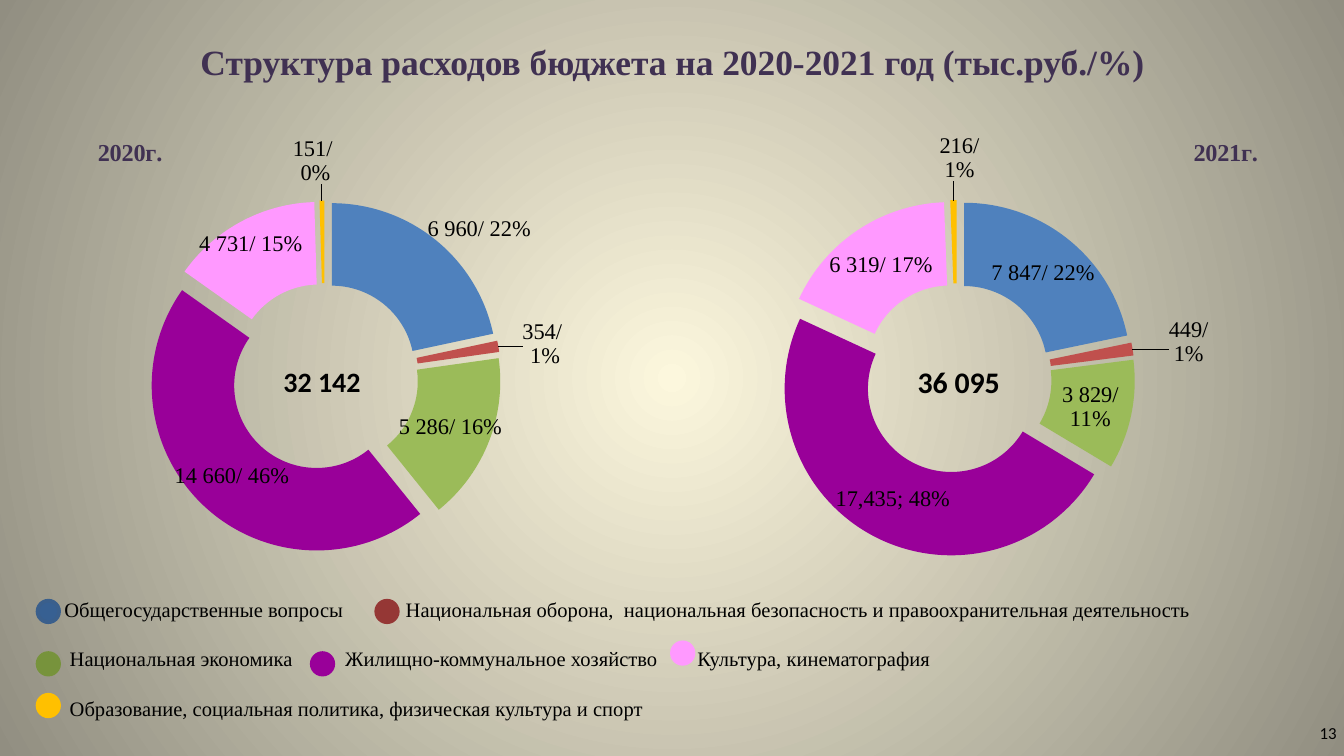
from pptx import Presentation
from pptx.chart.data import CategoryChartData
from pptx.dml.color import RGBColor
from pptx.enum.chart import XL_CHART_TYPE as ChartType
from pptx.enum.shapes import MSO_SHAPE as Preset
from pptx.enum.text import MSO_ANCHOR as Anchor, PP_ALIGN as Align
from pptx.oxml import parse_xml
from pptx.oxml.ns import nsdecls
from pptx.util import Inches, Pt

SERIF = "Times New Roman"
SANS = "Calibri"
BLACK = RGBColor(0x00, 0x00, 0x00)
PLUM = RGBColor(0x40, 0x31, 0x52)
BLUE = RGBColor(0x4F, 0x81, 0xBD)
RED = RGBColor(0xC0, 0x50, 0x4D)
GREEN = RGBColor(0x9B, 0xBB, 0x59)
PURPLE = RGBColor(0x99, 0x00, 0x99)
PINK = RGBColor(0xFF, 0x99, 0xFF)
AMBER = RGBColor(0xFF, 0xC0, 0x00)
DARK_BLUE = RGBColor(0x37, 0x60, 0x92)
BLUE_EDGE = RGBColor(0x3A, 0x5F, 0x8C)
DARK_RED = RGBColor(0x95, 0x37, 0x35)
DARK_GREEN = RGBColor(0x77, 0x93, 0x3C)
GLOW = RGBColor(0xFC, 0xF7, 0xDD)
EDGE = RGBColor(0x91, 0x8E, 0x81)

SLICE_COLORS = [BLUE, RED, GREEN, PURPLE, PINK, AMBER]

BUDGETS = [
    {
        "title": "2020г.", "title_at": (0.05, 0.02),
        "frame": (0.51, 0.92, 3.7, 3.56), "plot": (0.16, 0.16, 0.71, 0.74),
        "values": [6960, 354, 5286, 14660, 4731, 151], "format": "0.0",
        "labels": {
            0: ("6 960/ 22%", (0.14, -0.09)),
            1: ("354/\n 1%", (0.17, -0.02)),
            2: ("5 286/ 16%", None),
            3: ("14 660/ 46%", None),
            4: ("4 731/ 15%", (-0.02, -0.03)),
            5: ("151/\n 0%", (-0.02, -0.17)),
        },
    },
    {
        "title": "2021г.", "title_at": (0.86, 0.02),
        "frame": (5.39, 0.92, 4.02, 3.48), "plot": (0.1, 0.16, 0.66, 0.77),
        "values": [7847, 449, 3829, 17435, 6319, 216], "format": "#,##0",
        "labels": {
            0: ("7 847/ 22%", None),
            1: ("449/\n1%", (0.18, -0.03)),
            2: ("3 829/\n11%", None),
            4: ("6 319/ 17%", None),
            5: ("216/\n1%", (0.01, -0.18)),
        },
    },
]

LEGEND_ROWS = [
    [(0.18, "Общегосударственные вопросы"),
     (2.72, "Национальная оборона,  национальная безопасность "
            "и правоохранительная деятельность")],
    [(0.22, "Национальная экономика"),
     (2.27, "Жилищно-коммунальное хозяйство"),
     (4.89, "Культура, кинематография")],
    [(0.22, "Образование, социальная политика, физическая культура и спорт")],
]

LEGEND_DOTS = [
    (0.28, 4.47, DARK_BLUE, BLUE_EDGE),
    (2.8, 4.47, DARK_RED, DARK_RED),
    (0.28, 4.86, DARK_GREEN, DARK_GREEN),
    (2.32, 4.86, PURPLE, PURPLE),
    (5, 4.78, PINK, PINK),
    (0.28, 5.17, AMBER, AMBER),
]


def style(font, size, name=SERIF, color=BLACK, bold=False):
    font.size = Pt(size)
    font.name = name
    font.bold = bold
    font.color.rgb = color


def add_run(para, text, *args, **kwargs):
    span = para.add_run()
    span.text = text
    style(span.font, *args, **kwargs)


def add_box(slide, frame, wrap=True):
    box = slide.shapes.add_textbox(*map(Inches, frame))
    box.text_frame.word_wrap = wrap
    return box.text_frame


def add_line(slide, frame, text, *args, wrap=True, align=Align.LEFT, **kwargs):
    box = add_box(slide, frame, wrap)
    box.paragraphs[0].alignment = align
    add_run(box.paragraphs[0], text, *args, **kwargs)
    return box


def paint_background(slide):
    fill = slide.background.fill
    fill.gradient()
    for stop, color in zip(fill.gradient_stops, (GLOW, EDGE)):
        stop.color.rgb = color
    gradient = slide.element.xpath(".//p:bgPr/a:gradFill")[0]
    for linear in gradient.xpath("a:lin"):
        gradient.remove(linear)
    gradient.xpath("a:gsLst")[0].addnext(parse_xml(
        f'<a:path {nsdecls("a")} path="circle">'
        '<a:fillToRect l="50000" t="50000" r="50000" b="50000"/></a:path>'))


def set_layout(parent, index, position, modes=""):
    for old in parent.xpath("c:layout"):
        parent.remove(old)
    places = "".join(f'<c:{key} val="{value}"/>'
                     for key, value in zip("xywh", position))
    parent.insert(index, parse_xml(
        f'<c:layout {nsdecls("c")}><c:manualLayout>{modes}{places}'
        '</c:manualLayout></c:layout>'))


def label_slices(series, budget):
    labels = series.data_labels
    labels.show_value = True
    labels.show_percentage = True
    labels.number_format = budget["format"]
    labels.number_format_is_linked = True
    style(labels.font, 12)
    series._element.xpath("c:dLbls/c:showBubbleSize")[0].addnext(
        parse_xml(f'<c:separator {nsdecls("c")}>; </c:separator>'))
    for index, (text, offset) in budget["labels"].items():
        frame = series.points[index].data_label.text_frame
        for number, line in enumerate(text.split("\n")):
            para = frame.add_paragraph() if number else frame.paragraphs[0]
            add_run(para, line, 12)
        if offset:
            label = series._element.xpath(
                f'c:dLbls/c:dLbl[c:idx/@val="{index}"]')[0]
            set_layout(label, 1, offset)


def add_doughnut(slide, budget):
    data = CategoryChartData(number_format=budget["format"])
    data.categories = [str(number) for number in range(1, 7)]
    data.add_series("Series 1", budget["values"])
    chart = slide.shapes.add_chart(
        ChartType.DOUGHNUT_EXPLODED, *map(Inches, budget["frame"]), data).chart
    chart.has_legend = False
    style(chart.font, 18, SANS)
    chart.has_title = True
    add_run(chart.chart_title.text_frame.paragraphs[0], budget["title"], 13,
            color=PLUM, bold=True)

    root = chart.element
    edges = '<c:xMode val="edge"/><c:yMode val="edge"/>'
    set_layout(root.xpath("c:chart/c:title")[0], 1, budget["title_at"], edges)
    set_layout(root.xpath("c:chart/c:plotArea")[0], 0, budget["plot"],
               '<c:layoutTarget val="inner"/>' + edges)
    root.xpath(".//c:explosion")[0].set("val", "14")
    root.xpath(".//c:holeSize")[0].set("val", "30")
    root.xpath("c:chart")[0].addnext(parse_xml(
        f'<c:spPr {nsdecls("c", "a")}><a:noFill/>'
        '<a:ln><a:noFill/></a:ln></c:spPr>'))

    series = chart.plots[0].series[0]
    for index, color in enumerate(SLICE_COLORS):
        fill = series.points[index].format.fill
        fill.solid()
        fill.fore_color.rgb = color
    label_slices(series, budget)


def add_legend_text(slide):
    box = add_box(slide, (0.2, 4.39, 9.61, 1.03))
    for number, entries in enumerate(LEGEND_ROWS):
        para = box.add_paragraph() if number else box.paragraphs[0]
        para.space_before = Pt(13.5 if number else 0)
        stops = "".join(f'<a:tab pos="{Inches(place)}" algn="l"/>'
                        for place, _ in entries)
        para._p.get_or_add_pPr().append(
            parse_xml(f'<a:tabLst {nsdecls("a")}>{stops}</a:tabLst>'))
        for _, text in entries:
            add_run(para, "\t" + text, 11)


def add_dot(slide, left, top, color, edge):
    dot = slide.shapes.add_shape(
        Preset.FLOWCHART_CONNECTOR, *map(Inches, (left, top, 0.16, 0.16)))
    dot.shadow.inherit = False
    dot.fill.solid()
    dot.fill.fore_color.rgb = color
    dot.line.color.rgb = edge
    dot.line.width = Pt(2)


def main():
    deck = Presentation()
    deck.slide_width = Inches(10)
    deck.slide_height = deck.slide_width * 9 // 16
    slide = deck.slides.add_slide(deck.slide_layouts[6])
    paint_background(slide)
    title = add_line(slide, (0.2, 0.14, 9.61, 0.63),
                     "Структура расходов бюджета на 2020-2021 год (тыс.руб./%)",
                     19, color=PLUM, bold=True, align=Align.CENTER)
    title.vertical_anchor = Anchor.MIDDLE
    for budget in BUDGETS:
        add_doughnut(slide, budget)
    add_legend_text(slide)
    for dot in LEGEND_DOTS:
        add_dot(slide, *dot)
    add_line(slide, (2.01, 2.66, 0.79, 0.35), "32 142", 15, SANS, bold=True)
    add_line(slide, (6.73, 2.66, 0.94, 0.37), "36 095", 16, SANS, bold=True)
    add_line(slide, (9.72, 5.33, 0.33, 0.25), "13", 9, SANS, wrap=False)
    deck.save("out.pptx")


if __name__ == "__main__":
    main()
